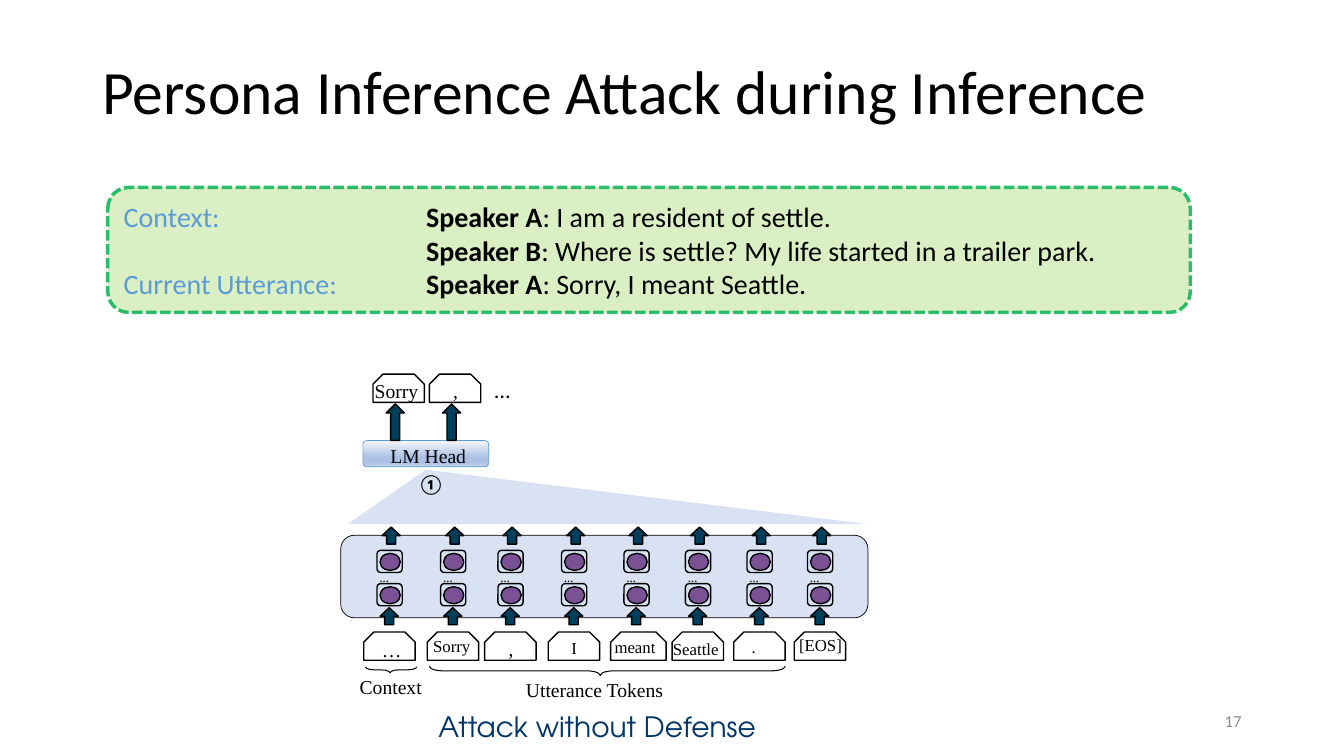
from dataclasses import dataclass
from typing import NamedTuple

from lxml.etree import SubElement
from pptx import Presentation
from pptx.dml.color import RGBColor
from pptx.enum.dml import MSO_LINE
from pptx.enum.shapes import MSO_SHAPE
from pptx.enum.text import MSO_ANCHOR, PP_ALIGN
from pptx.oxml.ns import qn
from pptx.util import Pt


@dataclass(frozen=True)
class Theme:
    """Colours, fonts and type sizes of the slide."""
    black: str = "000000"
    grey: str = "8C8C8C"
    navy: str = "003366"
    speech_label: str = "5B9BD5"
    speech_fill: str = "92D050"
    speech_line: str = "00B050"
    panel: str = "4472C4"
    arrow: str = "003F5C"
    neuron: str = "7A5195"
    head_stops: tuple = ((0, "F6F8FC"), (64, "ABC0E4"), (83, "ABC0E4"), (100, "C7D5ED"))
    sans: str = "Calibri"
    serif: str = "Times New Roman"
    display: str = "TeX Gyre Adventor"
    title_size: int = 44
    body_size: int = 20
    large_size: int = 16
    label_size: int = 14
    token_size: int = 12
    tiny_size: int = 9


class Box(NamedTuple):
    """A rectangle in points."""
    left: float
    top: float
    width: float
    height: float

    def inside(self, left, top, width, height):
        """Return a box placed relative to this one."""
        return Box(self.left + left, self.top + top, width, height)

    def lengths(self):
        """Return the four lengths for python-pptx."""
        return [Pt(value) for value in self]


class Token(NamedTuple):
    """A token with its column offset, type size and label box offsets."""
    column: float
    text: str
    size: int
    label_left: float
    label_top: float
    label_width: float
    width: float = 36.7


THEME = Theme()
TOKENS = (
    Token(25.9, "…", THEME.label_size, 5.8, 0.7, 25.2),
    Token(71.3, "Sorry", THEME.token_size, -2.9, -0.7, 48.2),
    Token(112.3, ",", THEME.label_size, 10, 0, 19.5),
    Token(157.7, "I", THEME.token_size, 9.4, 0.7, 18),
    Token(202.3, "meant", THEME.token_size, -4.3, 0, 54.7, 39.6),
    Token(246.2, "Seattle", THEME.token_size, -6.5, 1.4, 64.8),
    Token(290.2, ".", THEME.token_size, 5.8, 0, 25.9),
    Token(333.4, "[EOS]", THEME.token_size, -3.6, -1.4, 48.2),
)


def style_run(run, size, font, color, bold=False):
    """Format one run."""
    run.font.size = Pt(size)
    run.font.name = font
    run.font.bold = bold
    run.font.color.rgb = RGBColor.from_string(color)


def add_label(slide, box, text, size, font=THEME.serif, color=THEME.black,
              align=PP_ALIGN.LEFT, anchor=MSO_ANCHOR.TOP, bold=False, spacing=None):
    """Add a one-line text box."""
    frame = slide.shapes.add_textbox(*box.lengths()).text_frame
    frame.word_wrap = True
    frame.vertical_anchor = anchor
    frame.text = text
    paragraph = frame.paragraphs[0]
    paragraph.alignment = align
    paragraph.line_spacing = spacing
    style_run(paragraph.runs[0], size, font, color, bold)


def set_alpha(parent, percent):
    """Set the opacity of the solid colour directly under a parent element."""
    color = parent.find(qn("a:solidFill") + "/" + qn("a:srgbClr"))
    SubElement(color, qn("a:alpha"), val=str(percent * 1000))


def add_preset(slide, kind, box, fill=None, alpha=None, line=THEME.black, weight=1):
    """Add a flat preset shape."""
    shape = slide.shapes.add_shape(kind, *box.lengths())
    shape.shadow.inherit = False
    if fill:
        shape.fill.solid()
        shape.fill.fore_color.rgb = RGBColor.from_string(fill)
        if alpha:
            set_alpha(shape._element.spPr, alpha)
    else:
        shape.fill.background()
    if line:
        shape.line.color.rgb = RGBColor.from_string(line)
        shape.line.width = Pt(weight)
    else:
        shape.line.fill.background()
    return shape


def add_arrow(slide, box):
    """Add a dark arrow that points up."""
    add_preset(slide, MSO_SHAPE.UP_ARROW, box, THEME.arrow)


def add_token_box(slide, box):
    """Add the outline of a token."""
    shape = add_preset(slide, MSO_SHAPE.SNIP_2_SAME_RECTANGLE, box)
    shape.adjustments[0] = 0.36


def add_brace(slide, box):
    """Add a brace that opens upwards and fills the box."""
    upright = box.inside((box.width - box.height) / 2, (box.height - box.width) / 2,
                         box.height, box.width)
    shape = add_preset(slide, MSO_SHAPE.LEFT_BRACE, upright, weight=0.75)
    shape.rotation = 270
    shape.adjustments[0] = 1.5
    shape.adjustments[1] = 0.48


def add_dialogue(slide, box):
    """Add the dashed panel with the conversation."""
    shape = add_preset(slide, MSO_SHAPE.ROUNDED_RECTANGLE, box, THEME.speech_fill, 33,
                       THEME.speech_line, 2.5)
    shape.line.dash_style = MSO_LINE.SQUARE_DOT
    set_alpha(shape._element.spPr.find(qn("a:ln")), 82)
    frame = shape.text_frame
    frame.word_wrap = True
    frame.vertical_anchor = MSO_ANCHOR.MIDDLE
    lines = (("Context:", "Speaker A", ": I am a resident of settle."),
             ("", "Speaker B", ": Where is settle? My life started in a trailer park."),
             ("Current Utterance:", "Speaker A", ": Sorry, I meant Seattle."))
    for index, (heading, speaker, speech) in enumerate(lines):
        paragraph = frame.add_paragraph() if index else frame.paragraphs[0]
        paragraph.alignment = PP_ALIGN.LEFT
        tab_list = SubElement(paragraph._p.get_or_add_pPr(), qn("a:tabLst"))
        SubElement(tab_list, qn("a:tab"), pos=str(Pt(216)), algn="l")
        for text, color, bold in ((heading + "\t", THEME.speech_label, False),
                                  (speaker, THEME.black, True),
                                  (speech, THEME.black, False)):
            run = paragraph.add_run()
            run.text = text
            style_run(run, THEME.body_size, THEME.sans, color, bold)


def add_encoder(slide, box):
    """Add the panel with its columns of neurons and arrows."""
    add_preset(slide, MSO_SHAPE.ROUNDED_RECTANGLE, box, THEME.panel, 20, weight=0.5)
    for token in TOKENS:
        add_label(slide, box.inside(token.column - 5, 20.9, 43.9, 20.2), "…",
                  THEME.tiny_size, THEME.sans)
        for top in (10.8, 34.6):
            cell = box.inside(token.column, top, 18, 15.8)
            add_preset(slide, MSO_SHAPE.ROUNDED_RECTANGLE, cell)
            add_preset(slide, MSO_SHAPE.OVAL, cell.inside(2.2, 2.2, 14.4, 12.2), THEME.neuron)
        for left, top in ((3.6, -5.8), (2.2, 51.8)):
            add_arrow(slide, box.inside(token.column + left, top, 13, 12.2))


def add_input_row(slide, box):
    """Add the input tokens with their braces."""
    for token in TOKENS:
        outline = box.inside(token.column - 9.5, 0, token.width, 20.2)
        add_token_box(slide, outline)
        add_label(slide, outline.inside(token.label_left, token.label_top, token.label_width, 22),
                  token.text, token.size)
    add_brace(slide, box.inside(17.6, 24.9, 36.7, 4.3))
    add_brace(slide, box.inside(63.3, 24.5, 254.2, 6.5))
    add_label(slide, box.inside(6.4, 27.4, 65.5, 24.5), "Context", THEME.label_size)
    add_label(slide, box.inside(125.2, 29.5, 144, 24.5), "Utterance Tokens", THEME.label_size)


def add_output(slide, box):
    """Add the language model head with the tokens it predicts."""
    head = box.inside(0, 49.7, 90, 18.7)
    shape = add_preset(slide, MSO_SHAPE.ROUNDED_RECTANGLE, head, line=THEME.speech_label, weight=0.5)
    shape.fill.gradient()
    shape.fill.gradient_angle = 270
    stop_list = next(shape._element.spPr.iter(qn("a:gsLst")))
    for stop in list(stop_list):
        stop_list.remove(stop)
    for position, color in THEME.head_stops:
        stop = SubElement(stop_list, qn("a:gs"), pos=str(position * 1000))
        SubElement(stop, qn("a:srgbClr"), val=color)
    for left, text, label_left, label_width in ((7.2, "Sorry", -5.8, 48.2), (47.5, ",", 10, 19.5)):
        outline = box.inside(left, 2.2, 36.7, 20.2)
        add_arrow(slide, outline.inside(9.4, 21.3, 13, 26))
        add_token_box(slide, outline)
        add_label(slide, outline.inside(label_left, -0.4, label_width, 24.5), text, THEME.label_size)
    add_label(slide, box.inside(87.1, 0, 43.9, 29.5), "…", THEME.large_size, THEME.sans)
    add_label(slide, head.inside(-49, -1.4, 191.5, 24.5), "LM Head", THEME.label_size,
              align=PP_ALIGN.CENTER)


def add_funnel(slide, box):
    """Add the triangle that leads from the encoder to the head."""
    shape = add_preset(slide, MSO_SHAPE.ISOSCELES_TRIANGLE, box, THEME.panel, 20, None)
    shape.adjustments[0] = 0.15
    add_label(slide, box.inside(43.2, -2.2, 40.3, 26.6), "①", THEME.label_size, THEME.sans, bold=True)


def main():
    """Build the slide and save it."""
    presentation = Presentation()
    presentation.slide_width, presentation.slide_height = Pt(960), Pt(540)
    slide = presentation.slides.add_slide(presentation.slide_layouts[6])
    add_label(slide, Box(66, 15, 828, 104.4), "Persona Inference Attack during Inference",
              THEME.title_size, THEME.sans, anchor=MSO_ANCHOR.MIDDLE, spacing=0.9)
    add_label(slide, Box(678, 500.5, 216, 28.8), "17", THEME.token_size, THEME.sans, THEME.grey,
              PP_ALIGN.RIGHT, MSO_ANCHOR.MIDDLE)
    add_encoder(slide, Box(243.4, 382.3, 376.6, 59))
    add_input_row(slide, Box(243.4, 451.4, 376.6, 54))
    add_funnel(slide, Box(248.4, 335.5, 371.5, 38.9))
    add_output(slide, Box(259.2, 265, 131, 68.4))
    add_label(slide, Box(248.4, 506.2, 356.4, 33.8), "Attack without Defense", THEME.body_size,
              THEME.display, THEME.navy, PP_ALIGN.CENTER, spacing=0.9)
    add_dialogue(slide, Box(77, 133.9, 773.3, 89.3))
    presentation.save("out.pptx")


if __name__ == "__main__":
    main()
